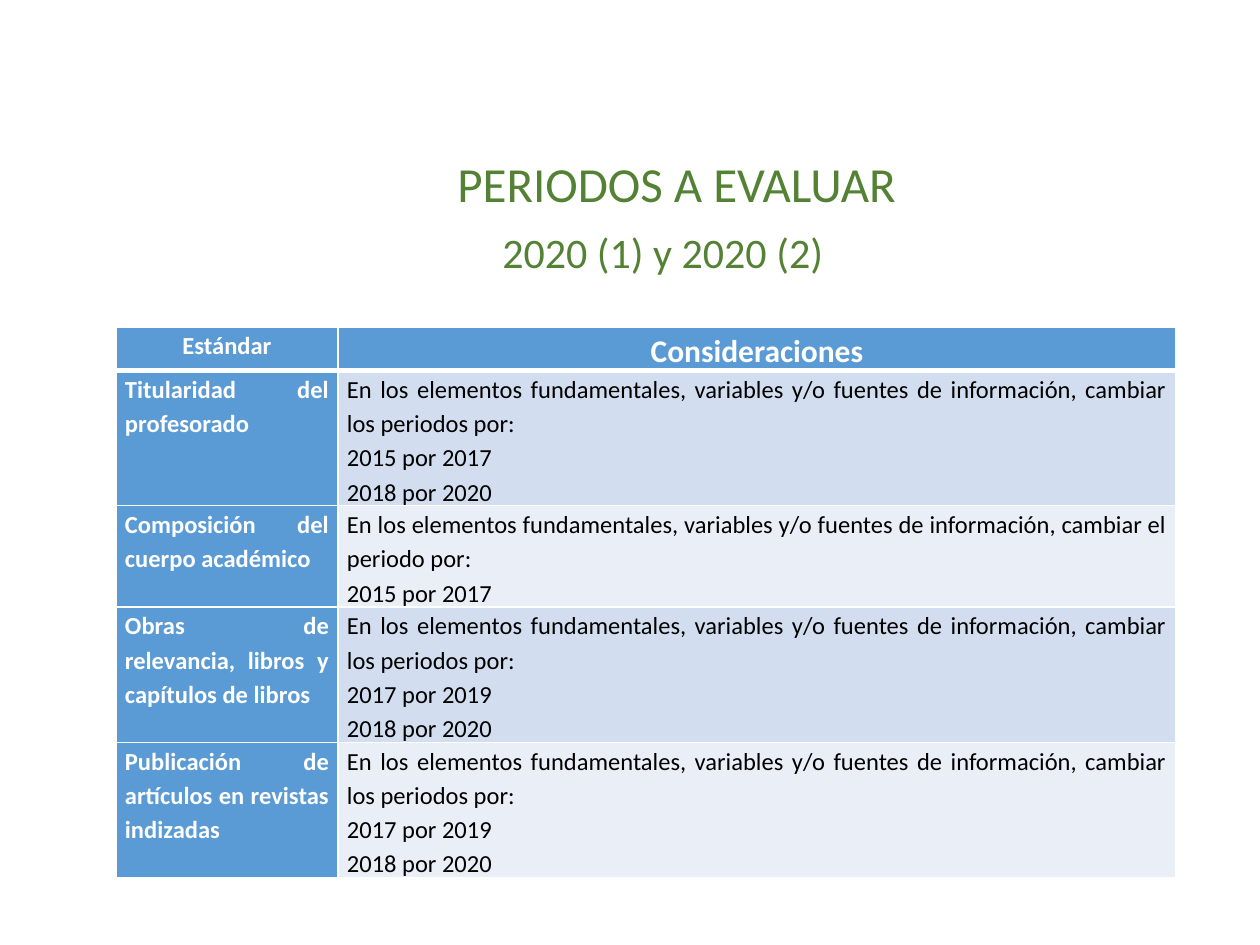
"""Build the slide of evaluation periods with its table of considerations."""
from dataclasses import dataclass

from lxml import etree
from pptx import Presentation
from pptx import util as u
from pptx.dml import color
from pptx.enum import text
from pptx.oxml import ns

EMU_PER_PX = 914400 / 126
FONT = "Calibri"
COLORS = {
    "heading": "548235",
    "header": "5B9BD5",
    "band_dark": "D2DEEF",
    "band_light": "EAEFF7",
    "white": "FFFFFF",
    "black": "000000",
}
CENTER = text.PP_ALIGN.CENTER
JUSTIFY = text.PP_ALIGN.JUSTIFY


@dataclass(frozen=True)
class Heading:
    wording: str
    left: int
    top: int
    width: int
    height: int
    size: int


@dataclass(frozen=True)
class Standard:
    name: str
    target: str
    changes: tuple[str, ...]
    height: int

    @property
    def considerations(self) -> str:
        intro = ("En los elementos fundamentales, variables y/o fuentes de "
                 f"información, cambiar {self.target} por:")
        return "\n".join((intro, *self.changes))


@dataclass(frozen=True)
class CellStyle:
    fill: str
    font_color: str = "white"
    bold: bool = True
    size: int = 14
    alignment: text.PP_ALIGN = JUSTIFY
    bottom_line: int = 1


HEADINGS = (
    Heading("PERIODOS A EVALUAR", 445, 147, 469, 72, 28),
    Heading("2020 (1) y 2020 (2)", 490, 220, 348, 63, 24),
)
STANDARDS = (
    Standard("Titularidad del profesorado", "los periodos",
             ("2015 por 2017", "2018 por 2020"), 135),
    Standard("Composición del cuerpo académico", "el periodo",
             ("2015 por 2017",), 101),
    Standard("Obras de relevancia, libros y capítulos de libros", "los periodos",
             ("2017 por 2019", "2018 por 2020"), 135),
    Standard("Publicación de artículos en revistas indizadas", "los periodos",
             ("2017 por 2019", "2018 por 2020"), 135),
)
TABLE_LEFT, TABLE_TOP = 116, 327
COLUMN_WIDTHS = (222, 838)
HEADER_HEIGHT = 43


def px(length: int) -> u.Emu:
    return u.Emu(round(length * EMU_PER_PX))


def rgb(name: str) -> color.RGBColor:
    return color.RGBColor.from_string(COLORS[name])


def format_runs(paragraph, size: int, color_name: str, bold: bool = False) -> None:
    for run in paragraph.runs:
        run.font.name = FONT
        run.font.size = u.Pt(size)
        run.font.bold = bold
        run.font.color.rgb = rgb(color_name)


def add_heading(slide, heading: Heading) -> None:
    shape = slide.shapes.add_textbox(
        px(heading.left), px(heading.top), px(heading.width), px(heading.height))
    frame = shape.text_frame
    frame.word_wrap = False
    frame.auto_size = text.MSO_AUTO_SIZE.SHAPE_TO_FIT_TEXT
    frame.text = heading.wording
    format_runs(frame.paragraphs[0], heading.size, "heading")


def set_borders(cell, bottom_width: int) -> None:
    properties = cell._tc.get_or_add_tcPr()
    widths = {"a:lnL": 1, "a:lnR": 1, "a:lnT": 1, "a:lnB": bottom_width}
    for position, (tag, width) in enumerate(widths.items()):
        line = etree.Element(ns.qn(tag), w=str(u.Pt(width)))
        fill = etree.SubElement(line, ns.qn("a:solidFill"))
        etree.SubElement(fill, ns.qn("a:srgbClr"), val=COLORS["white"])
        properties.insert(position, line)


def fill_cell(cell, wording: str, style: CellStyle) -> None:
    cell.margin_left = cell.margin_right = px(9)
    cell.margin_top = cell.margin_bottom = 0
    cell.fill.solid()
    cell.fill.fore_color.rgb = rgb(style.fill)
    set_borders(cell, style.bottom_line)
    cell.text_frame.text = wording
    for paragraph in cell.text_frame.paragraphs:
        paragraph.alignment = style.alignment
        paragraph.line_spacing = 1.15
        format_runs(paragraph, style.size, style.font_color, style.bold)


def add_standards_table(slide) -> None:
    heights = (HEADER_HEIGHT, *(standard.height for standard in STANDARDS))
    table = slide.shapes.add_table(
        len(heights), len(COLUMN_WIDTHS), px(TABLE_LEFT), px(TABLE_TOP),
        px(sum(COLUMN_WIDTHS)), px(sum(heights))).table
    for column, width in zip(table.columns, COLUMN_WIDTHS):
        column.width = px(width)
    for row, height in zip(table.rows, heights):
        row.height = px(height)

    for index, (title, size) in enumerate((("Estándar", 14), ("Consideraciones", 18))):
        style = CellStyle("header", size=size, alignment=CENTER, bottom_line=3)
        fill_cell(table.cell(0, index), title, style)
    for index, standard in enumerate(STANDARDS, start=1):
        band = "band_dark" if index % 2 else "band_light"
        fill_cell(table.cell(index, 0), standard.name, CellStyle("header"))
        fill_cell(table.cell(index, 1), standard.considerations,
                  CellStyle(band, "black", bold=False))


def main() -> None:
    presentation = Presentation()
    presentation.slide_width = px(1260)
    presentation.slide_height = px(945)
    slide = presentation.slides.add_slide(presentation.slide_layouts[6])
    for heading in HEADINGS:
        add_heading(slide, heading)
    add_standards_table(slide)
    presentation.save("out.pptx")


if __name__ == "__main__":
    main()
